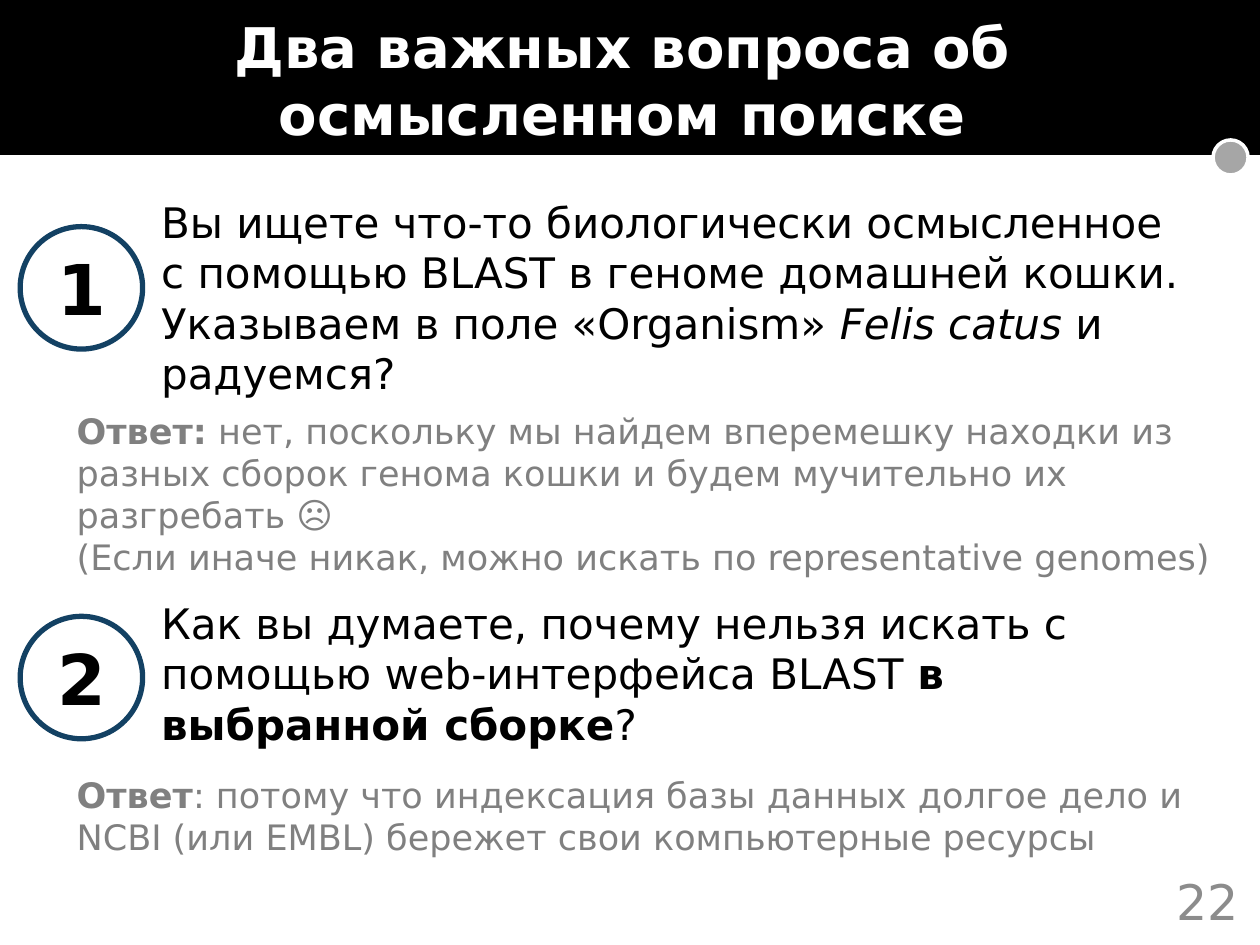
from lxml import etree
from pptx import Presentation
from pptx.dml.color import RGBColor
from pptx.enum.shapes import MSO_CONNECTOR, MSO_SHAPE
from pptx.enum.text import MSO_ANCHOR, PP_ALIGN
from pptx.oxml.ns import qn
from pptx.util import Pt

RECT, OVAL = MSO_SHAPE.RECTANGLE, MSO_SHAPE.OVAL
STRAIGHT = MSO_CONNECTOR.STRAIGHT
TOP, MIDDLE = MSO_ANCHOR.TOP, MSO_ANCHOR.MIDDLE
LEFT, CENTER, RIGHT = PP_ALIGN.LEFT, PP_ALIGN.CENTER, PP_ALIGN.RIGHT

FONT = "DejaVu Sans"
BLACK = RGBColor(0x00, 0x00, 0x00)
WHITE = RGBColor(0xFF, 0xFF, 0xFF)
NAVY = RGBColor(0x13, 0x41, 0x63)
ANSWER_GRAY = RGBColor(0x80, 0x80, 0x80)
NUMBER_GRAY = RGBColor(0x8C, 0x8C, 0x8C)
DOT_GRAY = RGBColor(0xA6, 0xA6, 0xA6)

WIDTH, HEIGHT = 720, 540
BAND_HEIGHT = 88.5
BADGE_LEFT, BADGE_SIZE = 11.5, 70
QUESTION_LEFT, ANSWER_LEFT = 85, 36.7

TITLE = "Два важных вопроса об осмысленном поиске"
PAGE_NUMBER = "22"

# Paragraphs are lists of (text, style) runs; boxes are (top, width, height).
ITEMS = [
    {
        "badge_top": 129.5,
        "question_box": (108.7, 607, 124),
        "question": [[
            ("Вы ищете что-то биологически осмысленное с помощью BLAST в геноме "
             "домашней кошки. Указываем в поле «Organism» ", ""),
            ("Felis catus", "i"),
            (" и радуемся?", ""),
        ]],
        "answer_box": (230.4, 666, 104.4),
        "answer": [
            [("Ответ:", "b"),
             (" нет, поскольку мы найдем вперемешку находки из разных сборок "
              "генома кошки и будем мучительно их разгребать ☹", "")],
            [("(Если иначе никак, можно искать по representative genomes)", "")],
        ],
    },
    {
        "badge_top": 352.2,
        "question_box": (337.9, 598.3, 94.3),
        "question": [[
            ("Как вы думаете, почему нельзя искать с помощью web-интерфейса "
             "BLAST ", ""),
            ("в выбранной сборке", "b"),
            ("?", ""),
        ]],
        "answer_box": (438.5, 652.3, 55.4),
        "answer": [[
            ("Ответ", "b"),
            (": потому что индексация базы данных долгое дело и NCBI (или EMBL) "
             "бережет свои компьютерные ресурсы", ""),
        ]],
    },
]


def write(sp, paragraphs, size, color, align=LEFT, anchor=TOP):
    tf = sp.text_frame
    tf.word_wrap = True
    tf.vertical_anchor = anchor
    for i, runs in enumerate(paragraphs):
        p = tf.add_paragraph() if i else tf.paragraphs[0]
        p.alignment = align
        for text, style in runs:
            r = p.add_run()
            r.text = text
            r.font.name = FONT
            r.font.size = Pt(size)
            r.font.color.rgb = color
            r.font.bold = "b" in style
            r.font.italic = "i" in style


def add_text(slide, left, top, width, height, *args, **kwargs):
    sp = slide.shapes.add_textbox(Pt(left), Pt(top), Pt(width), Pt(height))
    write(sp, *args, **kwargs)


def add_filled(slide, kind, left, top, width, height, fill, line=None, weight=2):
    sp = slide.shapes.add_shape(kind, Pt(left), Pt(top), Pt(width), Pt(height))
    sp.shadow.inherit = False
    sp.fill.solid()
    sp.fill.fore_color.rgb = fill
    if line is None:
        sp.line.fill.background()
    else:
        sp.line.color.rgb = line
        sp.line.width = Pt(weight)
    return sp


def add_header(slide):
    add_filled(slide, RECT, 0, 0, WIDTH, BAND_HEIGHT, BLACK)
    rule = slide.shapes.add_connector(STRAIGHT, 0, Pt(90), Pt(696), Pt(90))
    rule.line.color.rgb = WHITE
    rule.line.width = Pt(2)
    etree.SubElement(rule._element.spPr, qn("a:effectLst"))
    add_filled(slide, OVAL, 693.2, 80, 20, 20, DOT_GRAY, WHITE)

    title = slide.shapes.title
    title.left, title.top, title.width, title.height = (
        Pt(5.8), Pt(3.6), Pt(700), Pt(85))
    write(title, [[(TITLE, "b")]], 32, WHITE, CENTER)
    slide.shapes._spTree.append(title._element)  # in front of the black band


def add_item(slide, number, item):
    top, width, height = item["question_box"]
    add_text(slide, QUESTION_LEFT, top, width, height, item["question"], 24, BLACK)
    top, width, height = item["answer_box"]
    add_text(slide, ANSWER_LEFT, top, width, height, item["answer"], 20, ANSWER_GRAY)
    badge = add_filled(slide, OVAL, BADGE_LEFT, item["badge_top"],
                       BADGE_SIZE, BADGE_SIZE, WHITE, NAVY, 3)
    write(badge, [[(str(number), "b")]], 40, BLACK, CENTER, MIDDLE)


def main():
    prs = Presentation()
    prs.slide_width, prs.slide_height = Pt(WIDTH), Pt(HEIGHT)
    slide = prs.slides.add_slide(prs.slide_layouts[5])
    add_header(slide)
    add_text(slide, 547.2, 500.4, 167.8, 28.8, [[(PAGE_NUMBER, "")]],
             28, NUMBER_GRAY, RIGHT, MIDDLE)
    for number, item in enumerate(ITEMS, 1):
        add_item(slide, number, item)
    prs.save("out.pptx")


if __name__ == "__main__":
    main()
